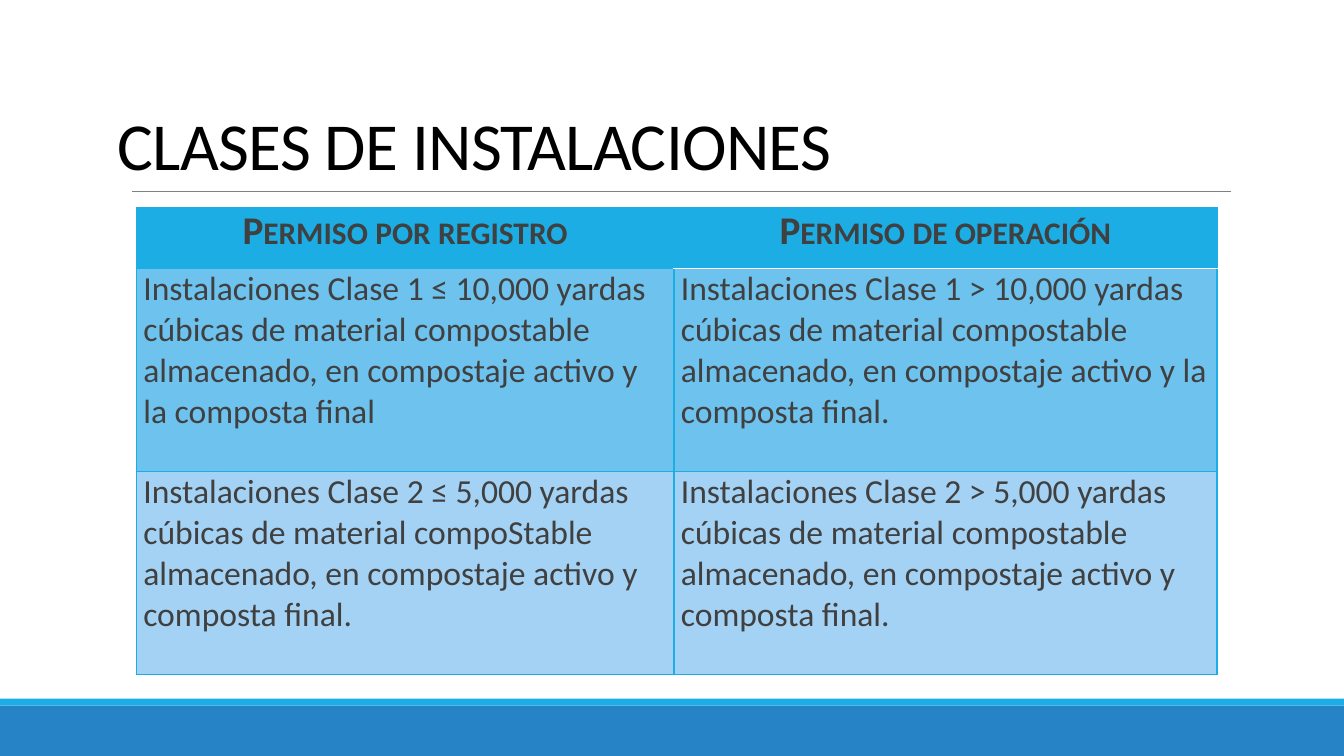
from lxml import etree
from pptx import Presentation
from pptx import util as u
from pptx.dml import color
from pptx.enum import shapes, text
from pptx.oxml import ns

Pt = u.Pt
BLACK = color.RGBColor(0x00, 0x00, 0x00)
WHITE = color.RGBColor(0xFF, 0xFF, 0xFF)
GRAY = color.RGBColor(0x80, 0x80, 0x80)
DARK = color.RGBColor(0x40, 0x40, 0x40)
CYAN = color.RGBColor(0x1C, 0xAD, 0xE4)
BLUE = color.RGBColor(0x26, 0x83, 0xC6)
SKY = color.RGBColor(0x6E, 0xC2, 0xEE)
PALE = color.RGBColor(0xA4, 0xD2, 0xF4)


def add_border(cell, side, tint, width):
    edge = etree.SubElement(cell._tc.get_or_add_tcPr(), ns.qn(f"a:ln{side}"), w=str(Pt(width)))
    solid = etree.SubElement(edge, ns.qn("a:solidFill"))
    etree.SubElement(solid, ns.qn("a:srgbClr"), val=str(tint))


deck = Presentation()
deck.slide_width, deck.slide_height = Pt(960), Pt(540)
slide = deck.slides.add_slide(deck.slide_layouts[5])

for top, height, tint in [(504, 36, BLUE), (499, 5, CYAN)]:
    band = slide.shapes.add_shape(shapes.MSO_SHAPE.RECTANGLE, 0, Pt(top), Pt(960), Pt(height))
    band.shadow.inherit = False
    band.fill.solid()
    band.fill.fore_color.rgb = tint
    band.line.fill.background()

rule = slide.shapes.add_connector(shapes.MSO_CONNECTOR.STRAIGHT, Pt(94.3), Pt(136.8), Pt(879), Pt(136.8))
rule.line.color.rgb = GRAY
rule.line.width = Pt(0.5)
etree.SubElement(rule._element.spPr, ns.qn("a:effectLst"))

heading = slide.shapes.title
heading.left, heading.top, heading.width, heading.height = Pt(77), Pt(21), Pt(792), Pt(114.5)
heading.text_frame.text = "CLASES DE INSTALACIONES"
heading.text_frame.auto_size = text.MSO_AUTO_SIZE.NONE
heading.text_frame.vertical_anchor = text.MSO_ANCHOR.BOTTOM
heading_line = heading.text_frame.paragraphs[0]
heading_line.alignment = text.PP_ALIGN.LEFT
heading_line.line_spacing = 0.85
heading_font = heading_line.runs[0].font
heading_font.name, heading_font.size = "Calibri", Pt(48)
heading_font.color.rgb = BLACK
heading_font._element.set("spc", "-50")

permits = [
    ("Permiso por registro", "Permiso de operación"),
    (
        "Instalaciones Clase 1 ≤ 10,000 yardas cúbicas de material compostable almacenado, en compostaje activo y la composta final",
        "Instalaciones Clase 1 > 10,000 yardas cúbicas de material compostable almacenado, en compostaje activo y la composta final.",
    ),
    (
        "Instalaciones Clase 2 ≤ 5,000 yardas cúbicas de material compoStable almacenado, en compostaje activo y composta final.",
        "Instalaciones Clase 2 > 5,000 yardas cúbicas de material compostable almacenado, en compostaje activo y composta final.",
    ),
]
classes = slide.shapes.add_table(3, 2, Pt(97.4), Pt(148.3), Pt(772), Pt(333.4)).table
for column, width in zip(classes.columns, (384, 388)):
    column.width = Pt(width)

for r, (height, tint) in enumerate([(43.4, CYAN), (145, SKY), (145, PALE)]):
    classes.rows[r].height = Pt(height)
    for c, wording in enumerate(permits[r]):
        cell = classes.cell(r, c)
        cell.margin_left = cell.margin_right = Pt(5)
        cell.margin_top = cell.margin_bottom = 0
        for side in "LRTB":
            if c == 1 and (r, side) in [(0, "B"), (1, "T")]:
                add_border(cell, side, WHITE, 1.25)
            else:
                add_border(cell, side, CYAN, 1)
        cell.fill.solid()
        cell.fill.fore_color.rgb = tint
        cell.text_frame.text = wording
        entry = cell.text_frame.paragraphs[0]
        entry.space_before = entry.space_after = Pt(12)
        entry.alignment = text.PP_ALIGN.LEFT if r else text.PP_ALIGN.CENTER
        font = entry.runs[0].font
        font.name, font.size, font.bold = "Calibri", Pt(24 if r else 28), r == 0
        font.color.rgb = DARK
        if r == 0:
            font._element.set("cap", "small")

deck.save("out.pptx")
